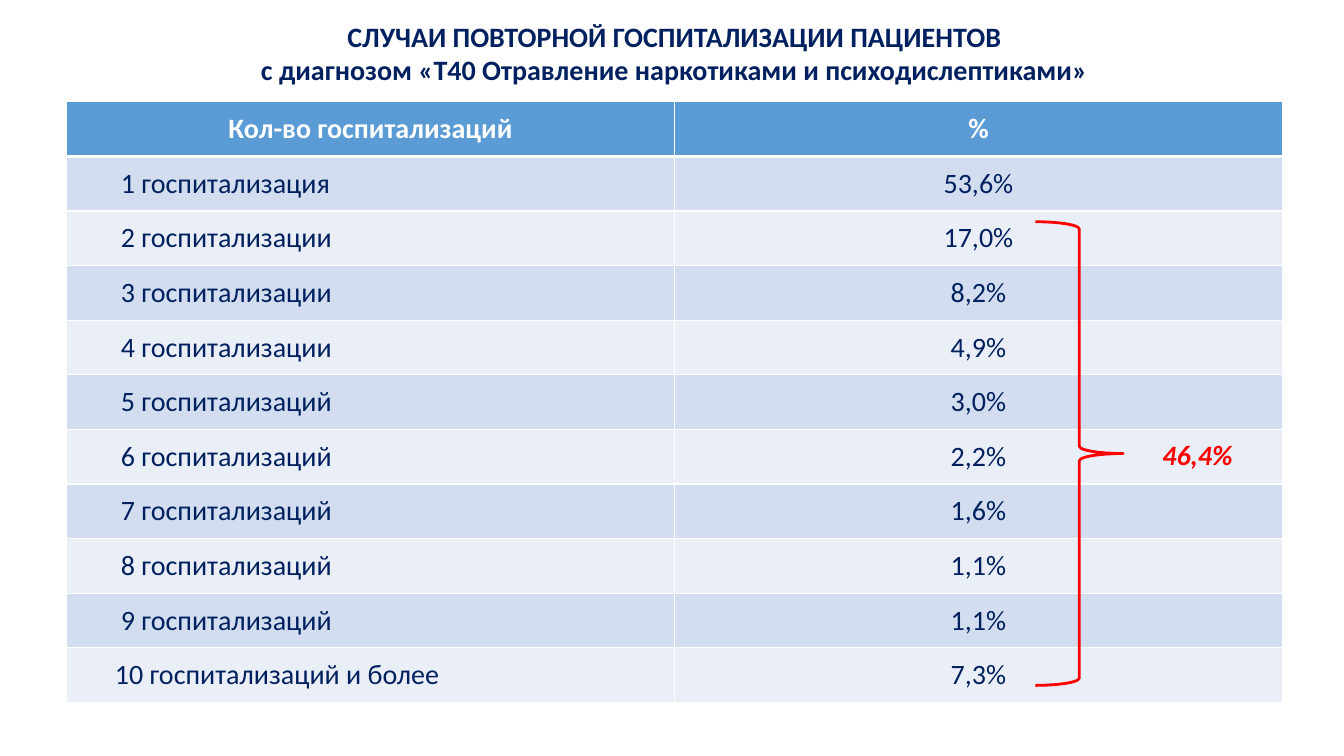
from dataclasses import dataclass

from lxml import etree
from pptx import Presentation
from pptx.dml.color import RGBColor
from pptx.enum.shapes import MSO_SHAPE
from pptx.enum.text import MSO_ANCHOR, MSO_AUTO_SIZE, PP_ALIGN
from pptx.oxml.ns import qn
from pptx.util import Inches, Pt

BRACE = MSO_SHAPE.RIGHT_BRACE
TOP, MIDDLE = MSO_ANCHOR.TOP, MSO_ANCHOR.MIDDLE
LEFT, CENTER = PP_ALIGN.LEFT, PP_ALIGN.CENTER
FIXED = MSO_AUTO_SIZE.NONE

COLORS = {
    "navy": "002060",
    "white": "FFFFFF",
    "red": "FF0000",
    "head": "5B9BD5",
    "odd": "D2DEEF",
    "even": "EAEFF7",
}
FONT = "Calibri"
SIZE = 20
EDGE, WIDTH = 0.66, 12.06
HEIGHT = 5.96


@dataclass
class Entry:
    label: str
    share: str
    indent: float = 0.54


TITLE = (
    "СЛУЧАИ ПОВТОРНОЙ ГОСПИТАЛИЗАЦИИ ПАЦИЕНТОВ\n"
    "с диагнозом «T40 Отравление наркотиками и психодислептиками»"
)
HEADS = ("Кол-во госпитализаций", "%")
ENTRIES = [
    Entry("1 госпитализация", "53,6%"),
    Entry("2 госпитализации", "17,0%"),
    Entry("3 госпитализации", "8,2%"),
    Entry("4 госпитализации", "4,9%"),
    Entry("5 госпитализаций", "3,0%"),
    Entry("6 госпитализаций", "2,2%"),
    Entry("7 госпитализаций", "1,6%"),
    Entry("8 госпитализаций", "1,1%"),
    Entry("9 госпитализаций", "1,1%"),
    Entry("10 госпитализаций и более", "7,3%", 0.48),
]


def paint(name: str) -> RGBColor:
    return RGBColor.from_string(COLORS[name])


def style(frame, color: str, bold: bool, align, italic: bool = False) -> None:
    for para in frame.paragraphs:
        para.alignment = align
        para.line_spacing = 1.0
        para.space_before = Pt(0)
        for run in para.runs:
            font = run.font
            font.name, font.size = FONT, Pt(SIZE)
            font.bold, font.italic = bold, italic
            font.color.rgb = paint(color)


def border(cell, top: int, bottom: int) -> None:
    """Draw white cell edges; top and bottom widths are in points."""
    props = cell._tc.get_or_add_tcPr()
    for tag, width in (("lnL", 1), ("lnR", 1), ("lnT", top), ("lnB", bottom)):
        line = etree.SubElement(props, qn(f"a:{tag}"), w=str(Pt(width)))
        fill = etree.SubElement(line, qn("a:solidFill"))
        etree.SubElement(fill, qn("a:srgbClr"), val=COLORS["white"])


def add_title(slide) -> None:
    title = slide.shapes.title
    title.left, title.top = Inches(EDGE), Inches(0.14)
    title.width, title.height = Inches(WIDTH), Inches(0.77)
    frame = title.text_frame
    frame.text = TITLE
    frame.auto_size = FIXED
    frame.vertical_anchor = TOP
    style(frame, "navy", True, CENTER)


def fill_cell(cell, text: str, row: int, align) -> None:
    head = row == 0
    border(cell, 3 if row == 1 else 1, 3 if head else 1)
    cell.fill.solid()
    cell.fill.fore_color.rgb = paint("head" if head else "odd" if row % 2 else "even")
    cell.vertical_anchor = MIDDLE
    cell.text_frame.text = text
    style(cell.text_frame, "white" if head else "navy", head, align)


def add_grid(slide) -> None:
    count = len(ENTRIES) + 1
    grid = slide.shapes.add_table(
        count, 2, Inches(EDGE), Inches(1.01), Inches(WIDTH), Inches(HEIGHT)
    ).table
    for col, text in enumerate(HEADS):
        fill_cell(grid.cell(0, col), text, 0, CENTER)
    for row, entry in enumerate(ENTRIES, 1):
        label = grid.cell(row, 0)
        fill_cell(label, entry.label, row, LEFT)
        label.margin_left = Inches(entry.indent)
        fill_cell(grid.cell(row, 1), entry.share, row, CENTER)


def add_total(slide) -> None:
    """Brace the repeat cases and show their sum."""
    brace = slide.shapes.add_shape(
        BRACE, Inches(10.27), Inches(2.2), Inches(0.87), Inches(4.6)
    )
    brace.shadow.inherit = False
    brace.fill.background()
    brace.line.color.rgb = paint("red")
    brace.line.width = Pt(2)
    box = slide.shapes.add_textbox(
        Inches(11.43), Inches(4.29), Inches(1.01), Inches(0.44)
    )
    frame = box.text_frame
    frame.word_wrap = True
    frame.text = "46,4%"
    style(frame, "red", True, LEFT, italic=True)


def main() -> None:
    deck = Presentation()
    deck.slide_width, deck.slide_height = Inches(13.33), Inches(7.5)
    slide = deck.slides.add_slide(deck.slide_layouts[5])
    add_title(slide)
    add_grid(slide)
    add_total(slide)
    deck.save("out.pptx")


if __name__ == "__main__":
    main()
